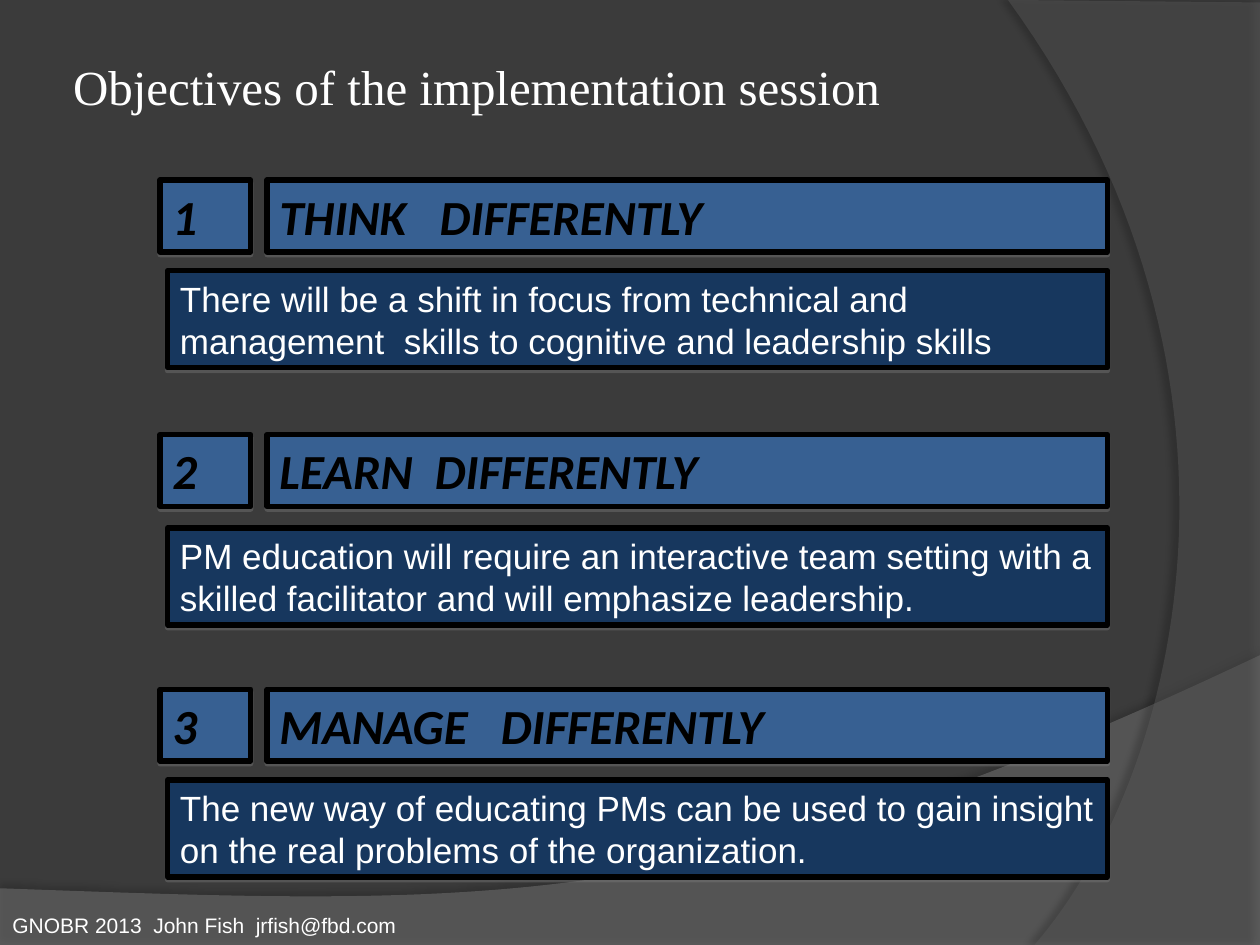
"""Builds the slide on the objectives of the implementation session."""
from dataclasses import dataclass

import pptx
import pptx.dml.color
import pptx.enum.shapes
import pptx.enum.text
import pptx.oxml
import pptx.oxml.ns
import pptx.util
from lxml import etree

Inches = pptx.util.Inches
RGB = pptx.dml.color.RGBColor.from_string
qn = pptx.oxml.ns.qn


@dataclass(frozen=True)
class Theme:
    background: str = "3B3B3B"
    wave: str = "7F7F7F"
    arc: str = "5E5E5E"
    heading: str = "376092"
    body: str = "17375E"
    dark: str = "000000"
    light: str = "FFFFFF"
    shade: str = "808080"
    title_font: str = "Times New Roman"
    heading_font: str = "Calibri"
    body_font: str = "Arial"
    large: int = 28
    medium: int = 20
    small: int = 12


def write(sp, text, font, size, color, bold=False, italic=False,
          anchor=pptx.enum.text.MSO_ANCHOR.TOP):
    tf = sp.text_frame
    tf.word_wrap = True
    tf.auto_size = pptx.enum.text.MSO_AUTO_SIZE.NONE
    tf.vertical_anchor = anchor
    p = tf.paragraphs[0]
    p.alignment = pptx.enum.text.PP_ALIGN.LEFT
    r = p.add_run()
    r.text = text
    r.font.name = font
    r.font.size = pptx.util.Pt(size)
    r.font.color.rgb = RGB(color)
    r.font.bold = bold
    r.font.italic = italic


def set_alpha(clr, percent):
    etree.SubElement(clr, qn("a:alpha"), val=str(percent * 1000))


def add_shadow(sp, color, alpha, blur, distance, angle):
    sp.shadow.inherit = False
    effects = sp._element.spPr.find(qn("a:effectLst"))
    outer = etree.SubElement(
        effects, qn("a:outerShdw"), blurRad=str(pptx.util.Pt(blur)),
        dist=str(pptx.util.Pt(distance)), dir=str(angle * 60000),
        algn="ctr", rotWithShape="0")
    set_alpha(etree.SubElement(outer, qn("a:srgbClr"), val=color), alpha)


def curve(start, c1, c2, end, steps=60):
    points = []
    for i in range(1, steps + 1):
        t = i / steps
        u = 1 - t
        points.append(tuple(
            u**3 * a + 3 * u * u * t * b + 3 * u * t * t * c + t**3 * d
            for a, b, c, d in zip(start, c1, c2, end)))
    return points


class Deck:
    def __init__(self, theme):
        self.theme = theme
        self.prs = pptx.Presentation()
        self.prs.slide_width = Inches(10)
        self.prs.slide_height = Inches(7.5)
        self.s = self.prs.slides.add_slide(self.prs.slide_layouts[5])
        fill = self.s.background.fill
        fill.solid()
        fill.fore_color.rgb = RGB(theme.background)

    def title(self, text, x, y, w, h):
        sp = self.s.shapes.title
        sp.left, sp.top, sp.width, sp.height = map(Inches, (x, y, w, h))
        write(sp, text, self.theme.title_font, self.theme.large,
              self.theme.light)

    def swoosh(self, points, color, alpha, shadow):
        emu = [(Inches(x), Inches(y)) for x, y in points]
        builder = self.s.shapes.build_freeform(*emu[0])
        builder.add_line_segments(emu[1:], close=True)
        sp = builder.convert_to_shape()
        sp.fill.solid()
        sp.fill.fore_color.rgb = RGB(color)
        set_alpha(sp._element.spPr.find(qn("a:solidFill"))[0], alpha)
        sp.line.fill.background()
        add_shadow(sp, self.theme.dark, *shadow)

    def box(self, text, x, y, w, h, fill, **style):
        sp = self.s.shapes.add_shape(
            pptx.enum.shapes.MSO_SHAPE.RECTANGLE,
            *map(Inches, (x, y, w, h)))
        sp.fill.solid()
        sp.fill.fore_color.rgb = RGB(fill)
        sp.line.color.rgb = RGB(self.theme.dark)
        sp.line.width = pptx.util.Pt(3)
        add_shadow(sp, self.theme.shade, 38, 0, 1.6, 90)
        write(sp, text, **style)

    def heading(self, text, x, y, w):
        t = self.theme
        self.box(text, x, y, w, 0.57, t.heading, font=t.heading_font,
                 size=t.large, color=t.dark, bold=True, italic=True)

    def body(self, text, y):
        t = self.theme
        self.box(text, 1.33, y, 7.46, 0.77, t.body, font=t.body_font,
                 size=t.medium, color=t.light)

    def footer(self, text, x, y, w, h):
        sp = self.s.shapes.add_textbox(*map(Inches, (x, y, w, h)))
        write(sp, text, self.theme.body_font, self.theme.small,
              self.theme.light)


def main():
    theme = Theme()
    deck = Deck(theme)
    wave = [(0, 7.05), (0, 7.51), (10, 7.51), (10, 5.2)]
    wave += curve((10, 5.2), (5.59, 7.29), (3.91, 7.19), (0, 7.05))
    deck.swoosh(wave, theme.wave, 45, (35, 4, 3.5, 270))
    arc = [(10, 0.02), (10, 7.5), (8.21, 7.5)]
    arc += curve((8.21, 7.5), (9.35, 6.19), (10.18, 3), (8, 0))
    deck.swoosh(arc, theme.arc, 40, (45, 4, 4, 180))

    deck.title("Objectives of the implementation session",
               0.48, 0.4, 9.13, 0.57)
    objectives = [
        ("THINK   DIFFERENTLY", 2.15,
         "There will be a shift in focus from technical and management  "
         "skills to cognitive and leadership skills"),
        ("LEARN  DIFFERENTLY", 4.19,
         "PM education will require an interactive team setting with a "
         "skilled facilitator and will emphasize leadership."),
        ("MANAGE   DIFFERENTLY", 6.19,
         "The new way of educating PMs can be used to gain insight on "
         "the real problems of the organization."),
    ]
    for i, (heading, body_top, body) in enumerate(objectives):
        top = 1.43 + 2.02 * i
        deck.heading(heading, 2.12, top, 6.67)
        deck.heading(str(i + 1), 1.27, top, 0.72)
        deck.body(body, body_top)
    deck.footer("GNOBR 2013  John Fish  jrfish@fbd.com", 0, 7.19, 4.75, 0.3)
    deck.prs.save("out.pptx")


if __name__ == "__main__":
    main()
